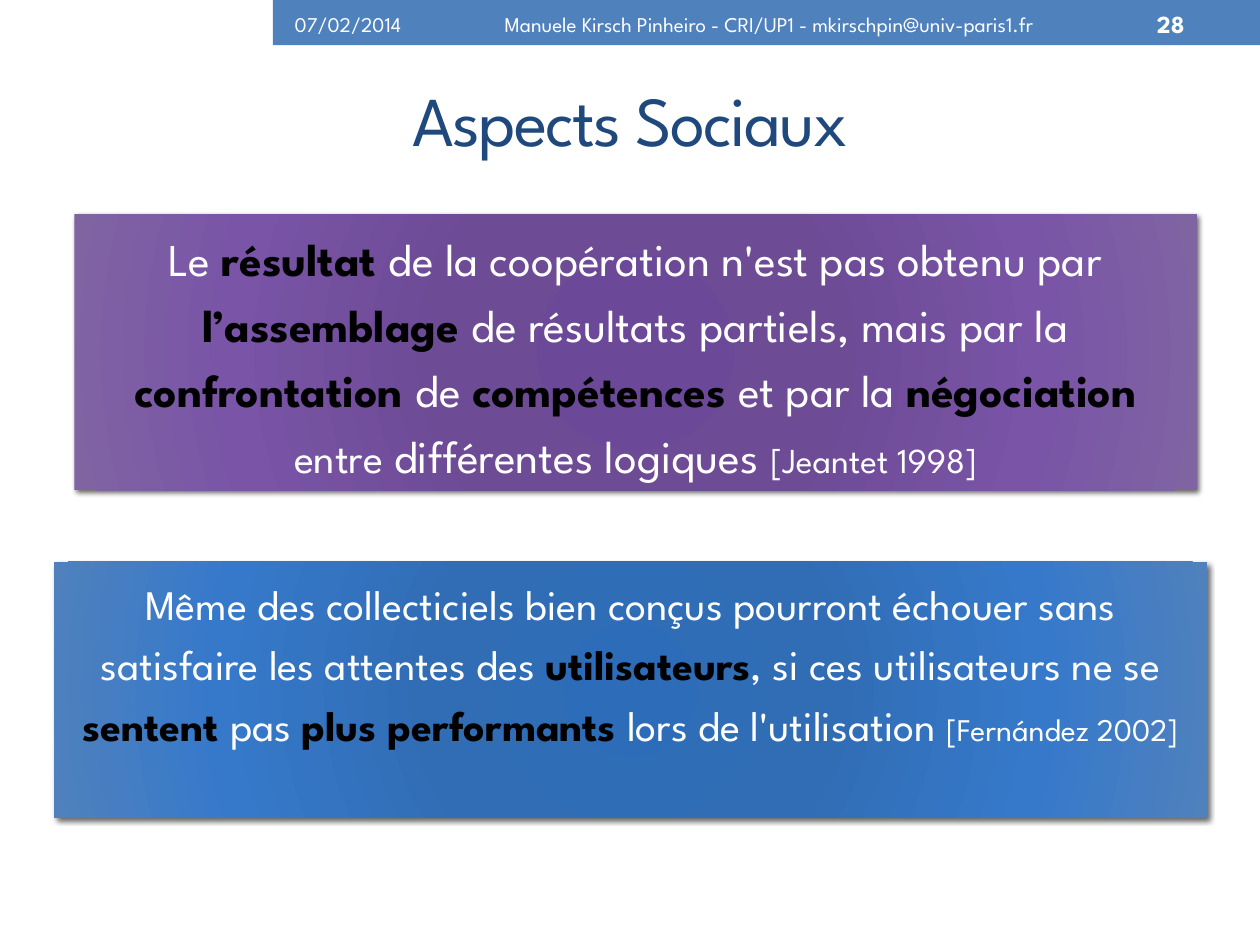
"""Build the slide "Aspects Sociaux" with its header band and two quotation panels."""
import pptx
import pptx.dml.color
import pptx.enum.shapes
import pptx.enum.text
import pptx.oxml
import pptx.oxml.ns
import pptx.util
from lxml import etree

Cm = pptx.util.Cm
ALIGN = pptx.enum.text.PP_ALIGN
ANCHOR = pptx.enum.text.MSO_ANCHOR
FONT = "League Spartan"
COLORS = {"band": "4F81BD", "title": "1F497D", "light": "FFFFFF", "strong": "000000", "shadow": "000000"}
GRADIENTS = {
    "blue": {0: "2C6CB9", 34: "316DB5", 70: "3679CA", 100: "4F81BD"},
    "purple": {0: "6C4898", 34: "6D4B95", 70: "7954A7", 100: "8064A2"},
}
JEANTET = [
    ("Le ", 26, False), ("résultat ", 26, True),
    ("de la coopération n'est pas obtenu par ", 26, False), ("l’assemblage ", 26, True),
    ("de résultats partiels, mais par la ", 26, False), ("confrontation ", 26, True),
    ("de ", 26, False), ("compétences ", 26, True), ("et par la ", 26, False),
    ("négociation ", 26, True), ("entre", 24, False), (" différentes logiques ", 26, False),
    ("[Jeantet 1998]", 20, False),
]
FERNANDEZ = [
    ("Même des collecticiels bien conçus pourront échouer sans satisfaire les attentes des ", 24, False),
    ("utilisateurs", 24, True), (", si ces utilisateurs ne se ", 24, False),
    ("sentent ", 24, True), ("pas ", 24, False), ("plus performants ", 24, True),
    ("lors de l'utilisation ", 24, False), ("[Fernández 2002]", 18, False),
]


def rgb(name):
    """Return the named colour."""
    return pptx.dml.color.RGBColor.from_string(COLORS[name])


def set_values(target, values):
    """Set attributes from a dict of format values."""
    for name, value in values.items():
        setattr(target, name, value)


def add_run(paragraph, text, size, color, bold=False):
    """Append one formatted run and return it."""
    run = paragraph.add_run()
    run.text = text
    set_values(run.font, {"name": FONT, "size": pptx.util.Pt(size), "bold": bold})
    run.font.color.rgb = rgb(color)
    return run


def add_rectangle(slide, box):
    """Add a rectangle without line or shadow."""
    kind = pptx.enum.shapes.MSO_SHAPE.RECTANGLE
    shape = slide.shapes.add_shape(kind, *map(Cm, box))
    shape.shadow.inherit = False
    shape.line.fill.background()
    return shape


def add_band(slide, box):
    """Add the header band."""
    shape = add_rectangle(slide, box)
    shape.fill.solid()
    shape.fill.fore_color.rgb = rgb("band")


def add_label(slide, box, text, size, color="light", align=ALIGN.LEFT, bold=False, spacing=0):
    """Add a vertically centred line of text."""
    frame = slide.shapes.add_textbox(*map(Cm, box)).text_frame
    set_values(frame, {"word_wrap": True, "vertical_anchor": ANCHOR.MIDDLE})
    paragraph = frame.paragraphs[0]
    paragraph.alignment = align
    run = add_run(paragraph, text, size, color, bold)
    if spacing:
        run.font._element.set("spc", str(spacing * 100))


def apply_radial_fill(shape, stops):
    """Fill a shape with a radial gradient."""
    namespace = pptx.oxml.ns.nsdecls("a")
    stop_xml = "".join(
        f'<a:gs pos="{position * 1000}"><a:srgbClr val="{color}"/></a:gs>'
        for position, color in stops.items()
    )
    gradient = pptx.oxml.parse_xml(
        f'<a:gradFill {namespace} rotWithShape="1"><a:gsLst>{stop_xml}</a:gsLst>'
        '<a:path path="circle"><a:fillToRect l="100000" t="100000" r="100000" b="100000"/></a:path>'
        '</a:gradFill>'
    )
    shape.fill.background()
    properties = shape.element.spPr
    properties.replace(properties.find(pptx.oxml.ns.qn("a:noFill")), gradient)


def apply_shadow(shape):
    """Give a shape a soft shadow to the lower right."""
    qn = pptx.oxml.ns.qn
    effects = shape.element.spPr.find(qn("a:effectLst"))
    shadow = etree.SubElement(
        effects, qn("a:outerShdw"), blurRad=str(pptx.util.Pt(3)), dist=str(pptx.util.Pt(2)),
        dir="2700000", algn="tl", rotWithShape="0",
    )
    color = etree.SubElement(shadow, qn("a:srgbClr"), val=COLORS["shadow"])
    etree.SubElement(color, qn("a:alpha"), val="60000")


def add_quote(slide, box, stops, runs):
    """Add a gradient panel with a centred quotation."""
    shape = add_rectangle(slide, box)
    apply_radial_fill(shape, stops)
    apply_shadow(shape)
    set_values(shape.text_frame, {"word_wrap": True, "vertical_anchor": ANCHOR.TOP})
    paragraph = shape.text_frame.paragraphs[0]
    set_values(paragraph, {"alignment": ALIGN.CENTER, "line_spacing": 1.2})
    for text, size, bold in runs:
        add_run(paragraph, text, size, "strong" if bold else "light", bold)


def main():
    """Build and save the presentation."""
    presentation = pptx.Presentation()
    set_values(presentation, {"slide_width": Cm(25.4), "slide_height": Cm(19.05)})
    slide = presentation.slides.add_slide(presentation.slide_layouts[6])
    add_band(slide, (5.5, 0, 19.9, 0.91))
    add_label(slide, (1.3, 1.12, 22.83, 2.54), "Aspects Sociaux", 40, "title", ALIGN.CENTER, spacing=-1)
    add_label(slide, (5.69, 0.05, 3, 0.86), "07/02/2014", 12)
    add_label(slide, (22.71, 0.05, 1.42, 0.86), "28", 14, align=ALIGN.RIGHT, bold=True)
    add_quote(slide, (1.09, 11.33, 23.24, 5.16), GRADIENTS["blue"], FERNANDEZ)
    add_quote(slide, (1.5, 4.32, 22.63, 5.56), GRADIENTS["purple"], JEANTET)
    add_label(slide, (8.51, 0.05, 14, 0.86),
              "Manuele Kirsch Pinheiro - CRI/UP1 - mkirschpin@univ-paris1.fr", 12, align=ALIGN.CENTER)
    presentation.save("out.pptx")


if __name__ == "__main__":
    main()
